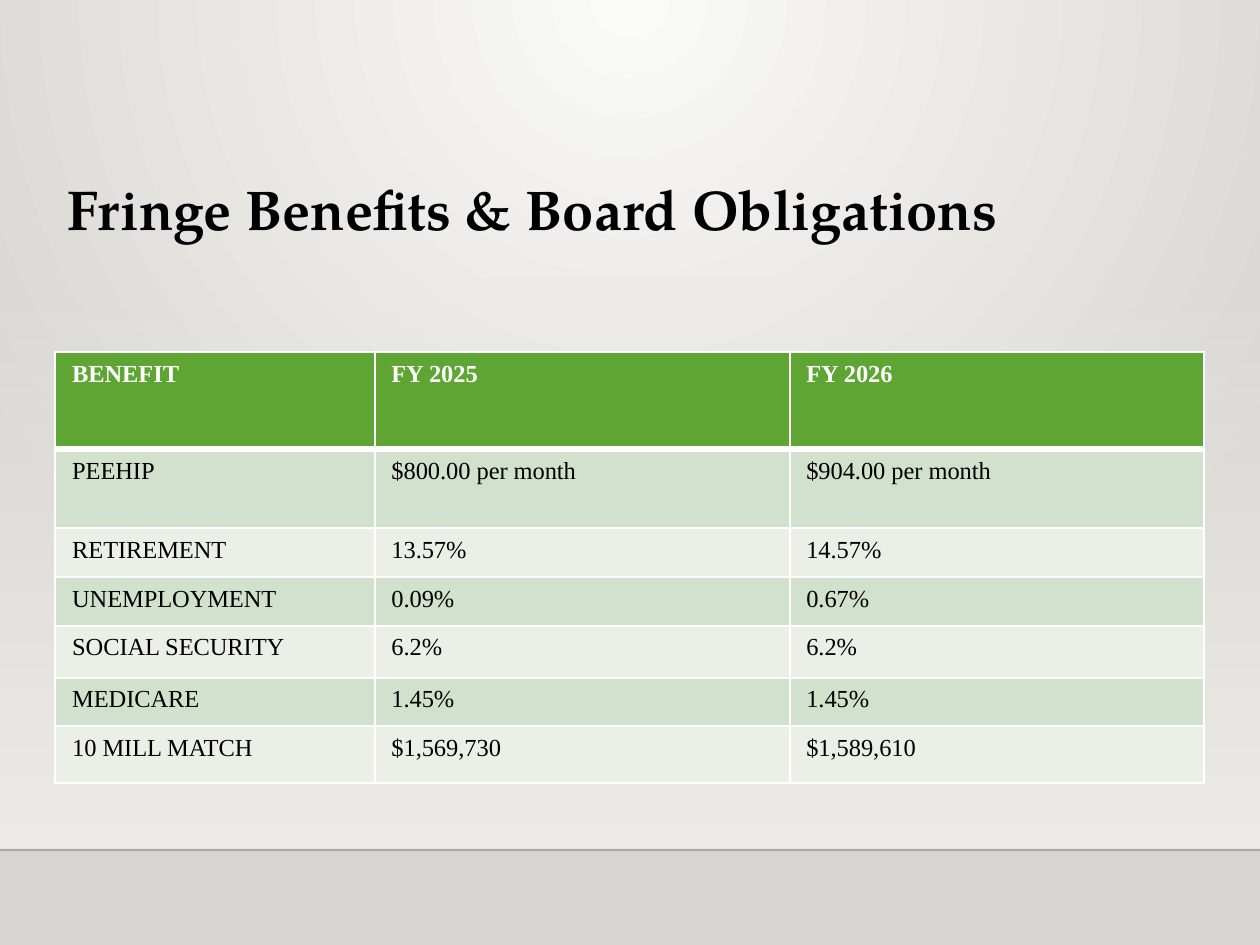
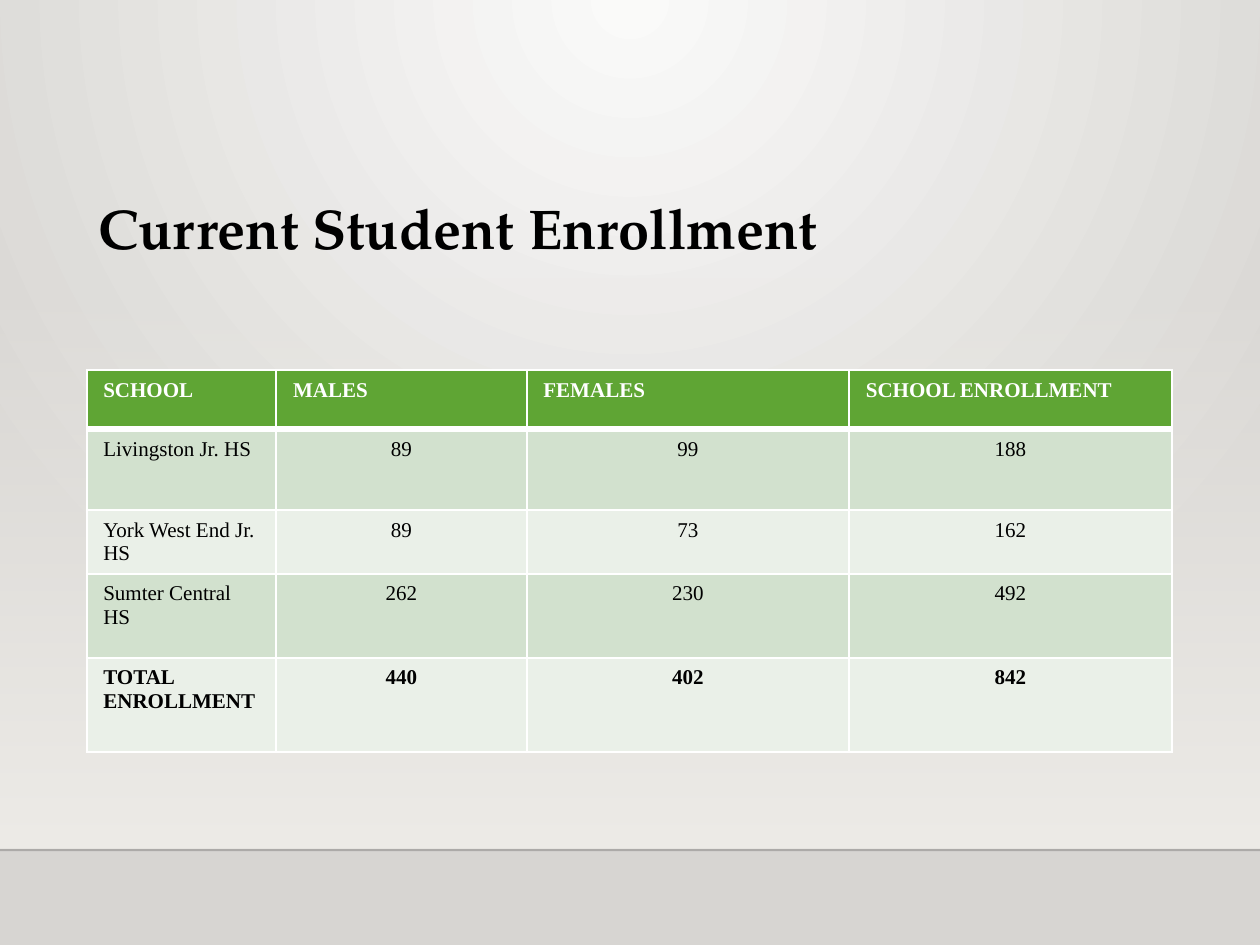
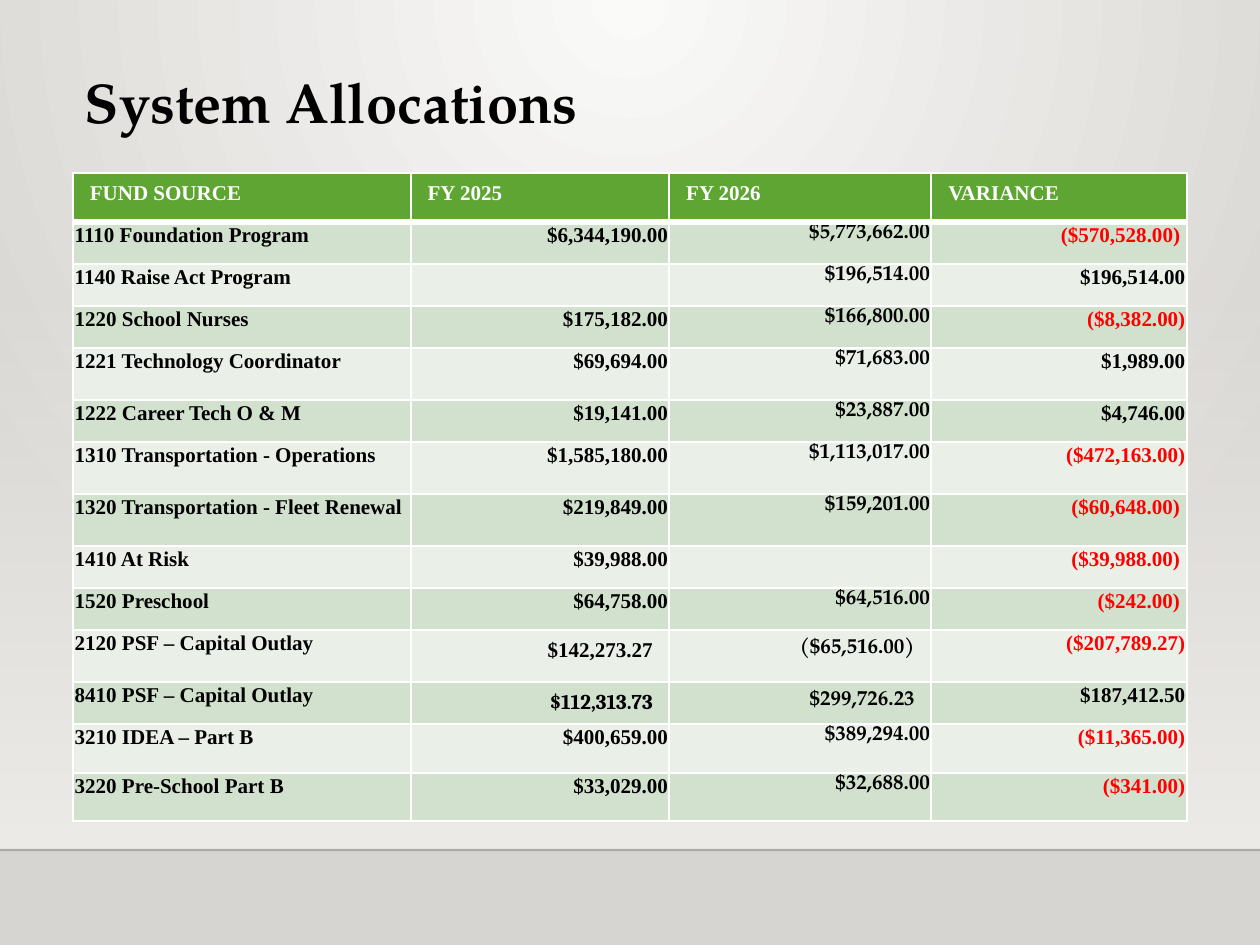
"""Build three budget table slides on a shared layout."""
from dataclasses import dataclass
from typing import Callable

from lxml import etree
from pptx import Presentation, slide, table
from pptx import util as u
from pptx.dml.color import RGBColor
from pptx.enum import shapes, text
from pptx.oxml import ns

Row = tuple[str, ...]


@dataclass(frozen=True)
class Theme:
    """Colours, fonts and type sizes of the deck."""
    ink: str = "000000"
    white: str = "FFFFFF"
    loss: str = "FF0000"
    header: str = "5FA534"
    bands: tuple[str, str] = ("EAF0E8", "D2E1CE")
    glow: str = "FAFAF9"
    floor: str = "D7D5D2"
    haze: str = "EDEBE7"
    rule: str = "000001"
    display: str = "TeX Gyre Pagella"
    body: str = "Times New Roman"
    accent: str = "Cambria"
    title_size: float = 24
    large: float = 10.5
    small: float = 9


THEME = Theme()
WIDTH, HEIGHT = 750, 562.5
HAZE_TOP, HAZE_ROWS, RULE_ROW = 165, 340, 506
TITLE_ROWS, TITLE_INSET = 70, 7
TIGHT = 1


@dataclass(frozen=True)
class CellStyle:
    """Look of the text in one cell."""
    font: str = THEME.body
    color: str = THEME.ink
    bold: bool = False
    align: text.PP_ALIGN = text.PP_ALIGN.LEFT
    tight: bool = False


Styler = Callable[[int, int, str], CellStyle]


@dataclass(frozen=True)
class TableSlide:
    """A title above a table, placed in grid units."""
    title: str
    left: float
    title_top: float
    title_cols: float
    table_top: float
    cols: tuple[int, ...]
    rows: tuple[int, ...]
    size: float
    styler: Styler
    data: tuple[Row, ...]


def grid(n: float) -> u.Length:
    """Return the length of n grid units of a hundredth of an inch."""
    return u.Inches(n / 100)


def rgb(color: str) -> RGBColor:
    """Return a colour from its hex code."""
    return RGBColor.from_string(color)


def plain_style(r: int, c: int, value: str) -> CellStyle:
    """Style every body cell alike."""
    return CellStyle()


def enrollment_style(r: int, c: int, value: str) -> CellStyle:
    """Centre the counts and embolden the total row."""
    align = text.PP_ALIGN.CENTER if c else text.PP_ALIGN.LEFT
    return CellStyle(bold=r == 4, align=align)


def allocation_style(r: int, c: int, value: str) -> CellStyle:
    """Right-align the amounts and show losses in red."""
    outlay = r in (10, 11) and c in (1, 2)
    font = THEME.display if c == 2 else THEME.body
    if (r, c) == (11, 1):
        font = THEME.accent
    return CellStyle(
        font=font,
        color=THEME.loss if c == 3 and value.startswith("(") else THEME.ink,
        bold=True,
        align=text.PP_ALIGN.RIGHT if c else text.PP_ALIGN.LEFT,
        tight=not outlay,
    )


SLIDES = (
    TableSlide(
        "Fringe Benefits & Board Obligations", 33, 81.5, 736, 209.5,
        (190, 247, 247), (58, 47, 29, 29, 31, 29, 34), THEME.large, plain_style,
        (
            ("BENEFIT", "FY 2025", "FY 2026"),
            ("PEEHIP", "$800.00 per month", "$904.00 per month"),
            ("RETIREMENT", "13.57%", "14.57%"),
            ("UNEMPLOYMENT", "0.09%", "0.67%"),
            ("SOCIAL SECURITY", "6.2%", "6.2%"),
            ("MEDICARE", "1.45%", "1.45%"),
            ("10 MILL MATCH", "$1,569,730", "$1,589,610"),
        ),
    ),
    TableSlide(
        "Current Student Enrollment", 51.5, 93, 685, 220.5,
        (113, 149, 192, 192), (35, 48, 38, 50, 56), THEME.small, enrollment_style,
        (
            ("SCHOOL", "MALES", "FEMALES", "SCHOOL ENROLLMENT"),
            ("Livingston Jr. HS", "89", "99", "188"),
            ("York West End Jr. HS", "89", "73", "162"),
            ("Sumter Central HS", "262", "230", "492"),
            ("TOTAL ENROLLMENT", "440", "402", "842"),
        ),
    ),
    TableSlide(
        "System Allocations", 43.5, 18, 671, 103, (201, 154, 156, 152),
        (29, 25, 25, 25, 31, 25, 31, 31, 25, 25, 31, 25, 29, 29),
        THEME.small, allocation_style,
        (
            ("FUND SOURCE", "FY 2025", "FY 2026", "VARIANCE"),
            ("1110 Foundation Program", "$6,344,190.00", "$5,773,662.00", "($570,528.00) "),
            ("1140 Raise Act Program", "", "$196,514.00", "$196,514.00"),
            ("1220 School Nurses", "$175,182.00", "$166,800.00", "($8,382.00)"),
            ("1221 Technology Coordinator", "$69,694.00", "$71,683.00", "$1,989.00"),
            ("1222 Career Tech O & M", "$19,141.00", "$23,887.00", "$4,746.00"),
            ("1310 Transportation - Operations", "$1,585,180.00", "$1,113,017.00",
             "($472,163.00)"),
            ("1320 Transportation - Fleet Renewal", "$219,849.00", "$159,201.00",
             "($60,648.00) "),
            ("1410 At Risk", "$39,988.00", "", "($39,988.00) "),
            ("1520 Preschool", "$64,758.00", "$64,516.00", "($242.00) "),
            ("2120 PSF – Capital Outlay", "$142,273.27", "($65,516.00)", "($207,789.27)"),
            ("8410 PSF – Capital Outlay", "$112,313.73", "$299,726.23", "$187,412.50"),
            ("3210 IDEA – Part B", "$400,659.00", "$389,294.00", "($11,365.00)"),
            ("3220 Pre-School Part B", "$33,029.00", "$32,688.00", "($341.00)"),
        ),
    ),
)


def set_alpha(color: etree.ElementBase, percent: int) -> None:
    """Make a colour element partly opaque."""
    etree.SubElement(color, ns.qn("a:alpha"), val=str(percent * 1000))


def paint_background(master: slide.SlideMaster) -> None:
    """Give the master a glow that spreads from the top centre."""
    fill = master.background.fill
    fill.gradient()
    for stop, color in zip(fill.gradient_stops, (THEME.glow, THEME.floor)):
        stop.color.rgb = rgb(color)
    lin = next(master.element.iter(ns.qn("a:lin")))
    circle = etree.Element(ns.qn("a:path"), path="circle")
    etree.SubElement(circle, ns.qn("a:fillToRect"), l="43000", t="0", r="43000", b="100000")
    lin.getparent().replace(lin, circle)


def decorate_layout(layout: slide.SlideLayout, s: slide.Slide) -> None:
    """Draw the haze and the rule, and move them into the layout."""
    for ph in list(layout.placeholders):
        if ph.placeholder_format.type != shapes.PP_PLACEHOLDER.TITLE:
            ph.element.getparent().remove(ph.element)
    haze = s.shapes.add_shape(shapes.MSO_SHAPE.RECTANGLE, 0, grid(HAZE_TOP),
                              grid(WIDTH), grid(HAZE_ROWS))
    haze.shadow.inherit = False
    haze.line.fill.background()
    haze.fill.gradient()
    haze.fill.gradient_angle = 270
    for stop in haze.fill.gradient_stops:
        stop.color.rgb = rgb(THEME.haze)
    set_alpha(next(haze.element.spPr.iter(ns.qn("a:srgbClr"))), 0)

    rule = s.shapes.add_connector(shapes.MSO_CONNECTOR.STRAIGHT, 0, grid(RULE_ROW),
                                  grid(WIDTH), grid(RULE_ROW))
    rule.line.width = u.Pt(1)
    rule.line.color.rgb = rgb(THEME.rule)
    set_alpha(next(rule.element.spPr.iter(ns.qn("a:srgbClr"))), 20)
    etree.SubElement(rule.element.spPr, ns.qn("a:effectLst"))
    for i, sp in enumerate((haze, rule), start=2):
        layout.shapes.element.insert(i, sp.element)


def add_title(s: slide.Slide, item: TableSlide) -> None:
    """Place and format the title placeholder."""
    sp = s.shapes.title
    sp.left, sp.top = grid(item.left), grid(item.title_top)
    sp.width, sp.height = grid(item.title_cols), grid(TITLE_ROWS)
    tf = sp.text_frame
    tf.text = item.title
    tf.word_wrap = True
    tf.auto_size = text.MSO_AUTO_SIZE.NONE
    tf.vertical_anchor = text.MSO_ANCHOR.BOTTOM
    tf.margin_left = tf.margin_right = grid(TITLE_INSET)
    tf.margin_top = tf.margin_bottom = grid(TITLE_INSET)
    p = tf.paragraphs[0]
    p.alignment = text.PP_ALIGN.LEFT
    p.line_spacing = 0.9
    p.font.name, p.font.size = THEME.display, u.Pt(THEME.title_size)
    p.font.bold, p.font.color.rgb = True, rgb(THEME.ink)


def set_borders(cell: table._Cell, top: float, bottom: float) -> None:
    """Draw white borders around a cell."""
    tc_pr = cell._tc.get_or_add_tcPr()
    widths = {"a:lnL": 1, "a:lnR": 1, "a:lnT": top, "a:lnB": bottom}
    for i, (tag, width) in enumerate(widths.items()):
        ln = etree.Element(ns.qn(tag), w=str(u.Pt(width)))
        solid = etree.SubElement(ln, ns.qn("a:solidFill"))
        etree.SubElement(solid, ns.qn("a:srgbClr"), val=THEME.white)
        tc_pr.insert(i, ln)


def fill_cell(cell: table._Cell, value: str, style: CellStyle, size: float) -> None:
    """Write and format the text of a cell."""
    cell.text = value
    if style.tight:
        cell.margin_left = cell.margin_right = cell.margin_top = grid(TIGHT)
        cell.margin_bottom = 0
    p = cell.text_frame.paragraphs[0]
    p.alignment = style.align
    p.font.name, p.font.size = style.font, u.Pt(size)
    p.font.bold, p.font.color.rgb = style.bold, rgb(style.color)
    if not value:
        etree.SubElement(p._p, ns.qn("a:endParaRPr"), sz=str(int(size * 100)))


def add_table(s: slide.Slide, item: TableSlide) -> None:
    """Draw the banded table of a slide."""
    frame = s.shapes.add_table(len(item.rows), len(item.cols), grid(item.left),
                               grid(item.table_top), grid(sum(item.cols)),
                               grid(sum(item.rows)))
    tbl = frame.table
    for col, width in zip(tbl.columns, item.cols):
        col.width = grid(width)
    for row, height in zip(tbl.rows, item.rows):
        row.height = grid(height)
    head = CellStyle(color=THEME.white, bold=True)
    for r, values in enumerate(item.data):
        for c, value in enumerate(values):
            cell = tbl.cell(r, c)
            style = item.styler(r, c, value) if r else head
            fill_cell(cell, value, style, item.size)
            cell.fill.solid()
            cell.fill.fore_color.rgb = rgb(THEME.bands[r % 2] if r else THEME.header)
            set_borders(cell, top=3 if r == 1 else 1, bottom=1 if r else 3)


def main() -> None:
    """Build and save the deck."""
    prs = Presentation()
    prs.slide_width, prs.slide_height = grid(WIDTH), grid(HEIGHT)
    layout = prs.slide_layouts.get_by_name("Title Only")
    paint_background(prs.slide_master)
    for i, item in enumerate(SLIDES):
        s = prs.slides.add_slide(layout)
        if i == 0:
            decorate_layout(layout, s)
        add_title(s, item)
        add_table(s, item)
    prs.save("out.pptx")


if __name__ == "__main__":
    main()
